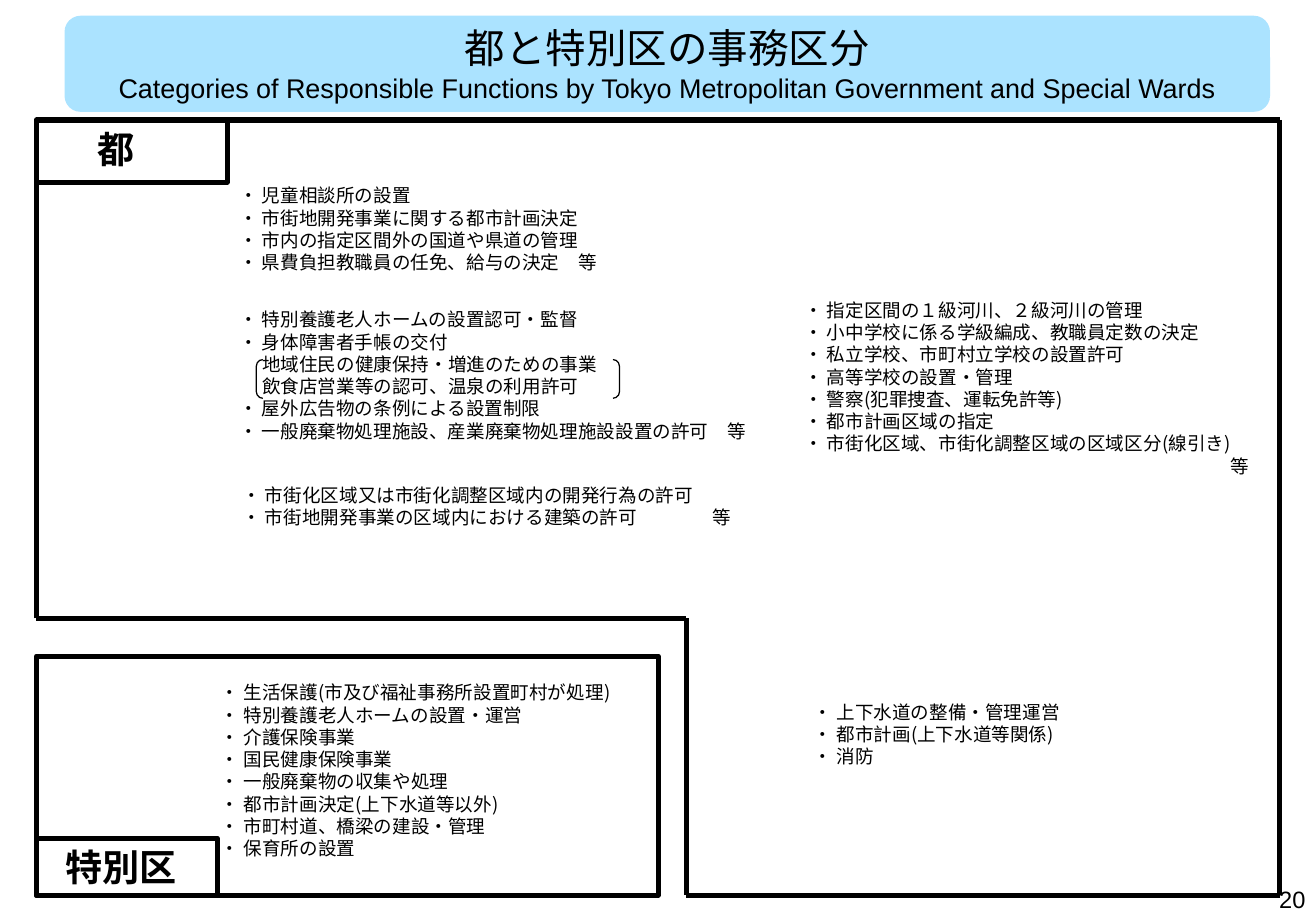
"""Build the slide on functions split between the metropolis and its special wards."""
from itertools import pairwise

from lxml.etree import SubElement
from pptx import Presentation
from pptx.dml.color import RGBColor
from pptx.enum.shapes import MSO_CONNECTOR, MSO_SHAPE
from pptx.enum.text import MSO_ANCHOR, PP_ALIGN
from pptx.oxml.ns import qn
from pptx.util import Cm, Pt

COLOURS = {"ink": "000000", "banner": "66CCFF"}
JAPANESE = "Noto Sans CJK JP"
LATIN = "Arial"


def write(box, lines, size, font=JAPANESE, bold=False, align=PP_ALIGN.LEFT, anchor=MSO_ANCHOR.TOP):
    """Fill a box with one paragraph per line and return the paragraphs."""
    frame = box.text_frame
    frame.word_wrap = True
    frame.vertical_anchor = anchor
    frame.text = "\n".join(lines)
    for para in frame.paragraphs:
        para.alignment = align
        para.line_spacing = Pt(size * 1.2)
        para.font.size = Pt(size)
        para.font.bold = bold
        para.font.name = font
        para.font.color.rgb = RGBColor.from_string(COLOURS["ink"])
        SubElement(para.font._element, qn("a:ea"), typeface=JAPANESE)
    return frame.paragraphs


def add_outline(kind, left, top, width, height, weight=0):
    """Add an unfilled shape, with a black line when a weight is given."""
    shape = page.shapes.add_shape(kind, Cm(left), Cm(top), Cm(width), Cm(height))
    shape.shadow.inherit = False
    shape.fill.background()
    if weight:
        shape.line.color.rgb = RGBColor.from_string(COLOURS["ink"])
        shape.line.width = Pt(weight)
    else:
        shape.line.fill.background()
    return shape


deck = Presentation()
deck.slide_width, deck.slide_height = Cm(27.51), Cm(19.05)
page = deck.slides.add_slide(deck.slide_layouts[6])

add_outline(MSO_SHAPE.RECTANGLE, 0.76, 13.72, 13, 5, 3)
area_tags = [
    ("都", 2.51, 3.99, 1.3, 1.02),
    ("特別区", 17.53, 3.78, 1.19, 0.36),
]
for name, top, width, height, indent in area_tags:
    tag = add_outline(MSO_SHAPE.RECTANGLE, 0.76, top, width, height, 3)
    para = write(tag, [name], 22, bold=True)[0]
    para._p.get_or_add_pPr().set("marL", str(Cm(indent)))

function_lists = {
    "wards": (4.37, 14.12, 11, 4.01, [
        "・ 生活保護(市及び福祉事務所設置町村が処理)",
        "・ 特別養護老人ホームの設置・運営",
        "・ 介護保険事業",
        "・ 国民健康保険事業",
        "・ 一般廃棄物の収集や処理",
        "・ 都市計画決定(上下水道等以外)",
        "・ 市町村道、橋梁の建設・管理",
        "・ 保育所の設置",
    ]),
    "designated": (4.75, 3.73, 9.4, 2.13, [
        "・ 児童相談所の設置",
        "・ 市街地開発事業に関する都市計画決定",
        "・ 市内の指定区間外の国道や県道の管理",
        "・ 県費負担教職員の任免、給与の決定　等",
    ]),
    "core": (4.75, 6.32, 13.21, 3.07, [
        "・ 特別養護老人ホームの設置認可・監督",
        "・ 身体障害者手帳の交付",
        "地域住民の健康保持・増進のための事業",
        "飲食店営業等の認可、温泉の利用許可",
        "・ 屋外広告物の条例による設置制限",
        "・ 一般廃棄物処理施設、産業廃棄物処理施設設置の許可　等",
    ]),
    "prefecture": (16.56, 6.12, 10.21, 4.01, [
        "・ 指定区間の１級河川、２級河川の管理",
        "・ 小中学校に係る学級編成、教職員定数の決定",
        "・ 私立学校、市町村立学校の設置許可",
        "・ 高等学校の設置・管理",
        "・ 警察(犯罪捜査、運転免許等)",
        "・ 都市計画区域の指定",
        "・ 市街化区域、市街化調整区域の区域区分(線引き)",
        "等",
    ]),
    "utilities": (16.76, 14.53, 7.8, 1.68, [
        "・ 上下水道の整備・管理運営",
        "・ 都市計画(上下水道等関係)",
        "・ 消防",
    ]),
}
paras = {}
for name, (left, top, width, height, lines) in function_lists.items():
    box = page.shapes.add_textbox(Cm(left), Cm(top), Cm(width), Cm(height))
    paras[name] = write(box, lines, 11)
for para in paras["core"][2:4]:
    para._p.get_or_add_pPr().set("marL", str(Cm(0.48)))
paras["prefecture"][-1]._p.get_or_add_pPr().set("marL", str(Cm(8.92)))

callout = add_outline(MSO_SHAPE.ROUNDED_RECTANGULAR_CALLOUT, 4.75, 9.93, 11, 1.32)
for index, value in enumerate([-0.21, 0.63, 0.17]):
    callout.adjustments[index] = value
permits = write(callout, [
    "・ 市街化区域又は市街化調整区域内の開発行為の許可",
    "・ 市街地開発事業の区域内における建築の許可\t等",
], 11)
properties = permits[1]._p.get_or_add_pPr()
tabs = SubElement(properties, qn("a:tabLst"))
SubElement(tabs, qn("a:tab"), pos=str(Cm(9.82)), algn="l")
permits[1].font._element.addprevious(tabs)

metropolis_corners = [
    (4.75, 2.51), (26.75, 2.51), (26.75, 12.93), (26.75, 18.72),
    (14.35, 18.72), (14.35, 12.93), (0.76, 12.93), (0.76, 2.51),
]
for start, end in pairwise(metropolis_corners):
    edge = page.shapes.add_connector(MSO_CONNECTOR.STRAIGHT, *map(Cm, start + end))
    edge.line.color.rgb = RGBColor.from_string(COLOURS["ink"])
    edge.line.width = Pt(3)
    SubElement(edge._element.spPr, qn("a:effectLst"))

banner = add_outline(MSO_SHAPE.ROUNDED_RECTANGLE, 1.35, 0.33, 25.2, 2.01)
banner.fill.solid()
banner.fill.fore_color.rgb = RGBColor.from_string(COLOURS["banner"])
tint = banner._element.spPr.find(qn("a:solidFill")).find(qn("a:srgbClr"))
SubElement(tint, qn("a:alpha"), val="55000")
heading, subheading = write(banner, [
    "都と特別区の事務区分",
    "Categories of Responsible Functions by Tokyo Metropolitan Government and Special Wards",
], 24, LATIN, align=PP_ALIGN.CENTER, anchor=MSO_ANCHOR.MIDDLE)
subheading.font.size = Pt(16)
subheading.line_spacing = 1.0

add_outline(MSO_SHAPE.DOUBLE_BRACKET, 5.36, 7.52, 7.59, 0.81, 0.75)

number_box = page.shapes.add_textbox(Cm(21.11), Cm(18.39), Cm(6.43), Cm(0.66))
write(number_box, ["20"], 14, LATIN, align=PP_ALIGN.RIGHT)

deck.save("out.pptx")
